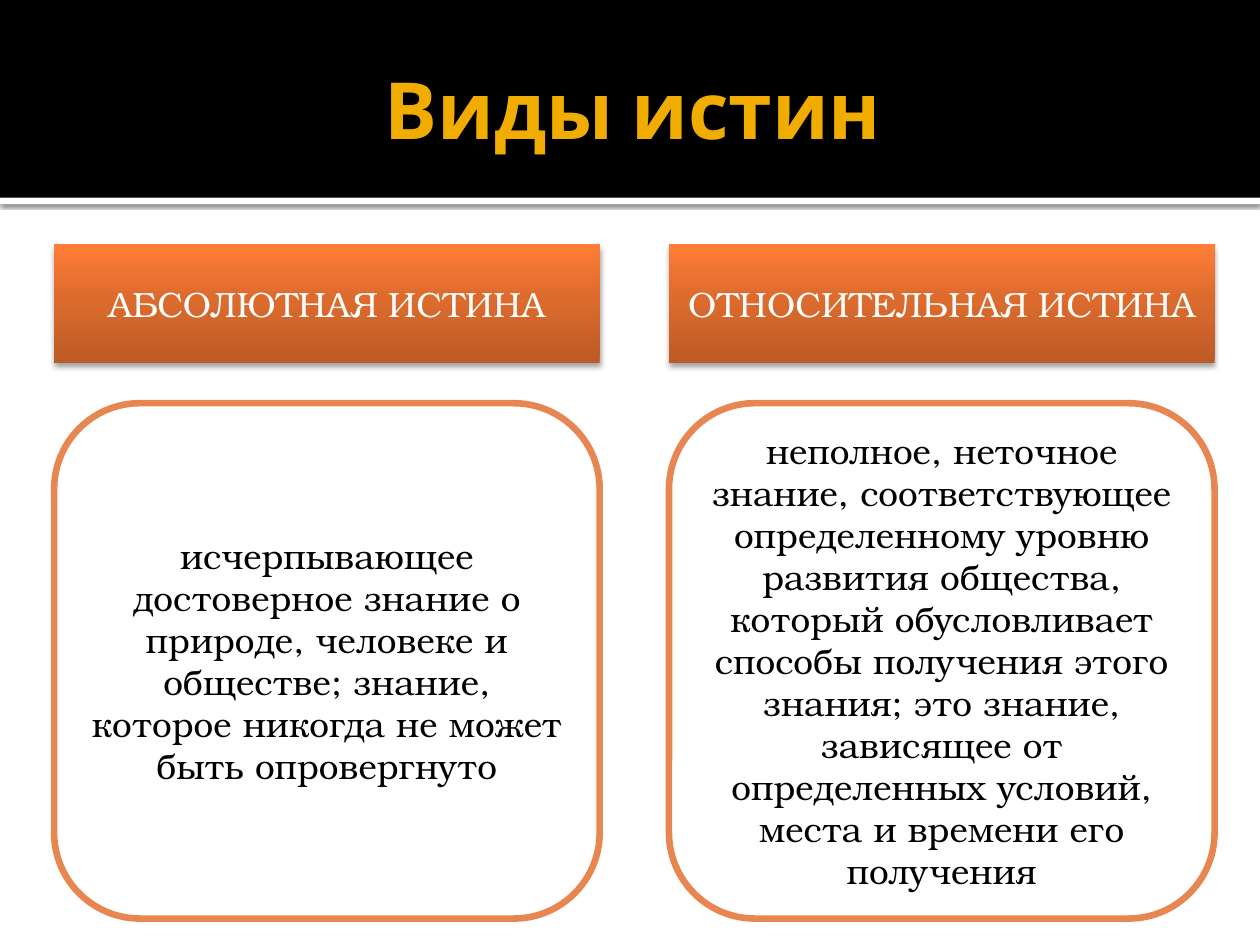
from copy import deepcopy
from dataclasses import dataclass

from lxml import etree
from pptx import Presentation
from pptx.dml.color import RGBColor
from pptx.enum.shapes import MSO_SHAPE
from pptx.enum.text import MSO_ANCHOR, PP_ALIGN
from pptx.oxml.ns import qn
from pptx.util import Inches, Pt

RECT = MSO_SHAPE.RECTANGLE
ROUND = MSO_SHAPE.ROUNDED_RECTANGLE
MIDDLE = MSO_ANCHOR.MIDDLE
CENTER = PP_ALIGN.CENTER


@dataclass(frozen=True)
class Theme:
    black: str = "000000"
    white: str = "FFFFFF"
    gold: str = "F0AD00"
    edge: str = "E88651"
    ramp: tuple = ((0, "BC5B26"), (0.55, "DD6B2D"), (1, "FF7D37"))
    head: str = "Cabin"
    body: str = "TeX Gyre Bonum"
    big: int = 45
    small: int = 20
    border: float = 3.78


@dataclass(frozen=True)
class Box:
    left: float
    top: float
    width: float
    height: float

    def place(self) -> list:
        return [Inches(v) for v in (self.left, self.top, self.width, self.height)]


@dataclass(frozen=True)
class Shade:
    alpha: int
    blur: float
    dist: float


@dataclass(frozen=True)
class Truth:
    name: str
    text: str


THEME = Theme()
LEFT, STEP, WIDTH = 0.43, 4.88, 4.33
TRUTHS = (
    Truth(
        "АБСОЛЮТНАЯ ИСТИНА",
        "исчерпывающее достоверное знание о природе, человеке и обществе; "
        "знание, которое никогда не может быть опровергнуто",
    ),
    Truth(
        "ОТНОСИТЕЛЬНАЯ ИСТИНА",
        "неполное, неточное знание, соответствующее определенному уровню "
        "развития общества, который обусловливает способы получения этого "
        "знания; это знание, зависящее от определенных условий, места и "
        "времени его получения",
    ),
)


def write(shape, text: str, *, color: str, font: str = THEME.body,
          size: int = THEME.small, bold: bool = False) -> None:
    frame = shape.text_frame
    frame.word_wrap = True
    frame.vertical_anchor = MIDDLE
    para = frame.paragraphs[0]
    para.alignment = CENTER
    run = para.add_run()
    run.text = text
    run.font.name = font
    run.font.size = Pt(size)
    run.font.bold = bold
    run.font.color.rgb = RGBColor.from_string(color)


def block(slide, kind, box: Box, fill: str, edge: str | None = None):
    shape = slide.shapes.add_shape(kind, *box.place())
    shape.shadow.inherit = False
    shape.fill.solid()
    shape.fill.fore_color.rgb = RGBColor.from_string(fill)
    if edge:
        shape.line.color.rgb = RGBColor.from_string(edge)
        shape.line.width = Pt(THEME.border)
    else:
        shape.line.fill.background()
    return shape


def shade(shape, look: Shade) -> None:
    effects = shape._element.spPr.find(qn("a:effectLst"))
    outer = etree.SubElement(
        effects, qn("a:outerShdw"), blurRad=str(Pt(look.blur)),
        dist=str(Pt(look.dist)), dir="5400000", algn="ctr", rotWithShape="0")
    color = etree.SubElement(outer, qn("a:srgbClr"), val=THEME.black)
    etree.SubElement(color, qn("a:alpha"), val=str(look.alpha * 1000))


def blend(shape, ramp: tuple) -> None:
    fill = shape.fill
    fill.gradient()
    fill.gradient_angle = 90
    stops = shape._element.spPr.find(qn("a:gradFill")).find(qn("a:gsLst"))
    stops.append(deepcopy(stops[0]))
    for stop, (pos, color) in zip(fill.gradient_stops, ramp):
        stop.position = pos
        stop.color.rgb = RGBColor.from_string(color)


def banner(slide) -> None:
    strip = block(slide, RECT, Box(0, 1.57, 10, 0.05), THEME.white)
    shade(strip, Shade(60, 2.5, 0.8))
    block(slide, RECT, Box(0, 0, 10, 1.57), THEME.black)
    title = slide.shapes.add_textbox(*Box(0.5, 0.17, 9, 1.37).place())
    title.text_frame.margin_right = Inches(0.05)
    write(title, "Виды истин", color=THEME.gold, font=THEME.head,
          size=THEME.big, bold=True)


def column(slide, left: float, truth: Truth) -> None:
    panel = block(slide, ROUND, Box(left, 3.2, WIDTH, 4.09), THEME.white, THEME.edge)
    write(panel, truth.text, color=THEME.black)
    label = block(slide, RECT, Box(left, 1.94, WIDTH, 0.94), THEME.white)
    blend(label, THEME.ramp)
    shade(label, Shade(38, 3.1, 2))
    write(label, truth.name, color=THEME.white)


def main() -> None:
    deck = Presentation()
    deck.slide_width, deck.slide_height = Inches(10), Inches(7.5)
    slide = deck.slides.add_slide(deck.slide_layouts[6])
    banner(slide)
    for i, truth in enumerate(TRUTHS):
        column(slide, LEFT + i * STEP, truth)
    deck.save("out.pptx")


if __name__ == "__main__":
    main()
